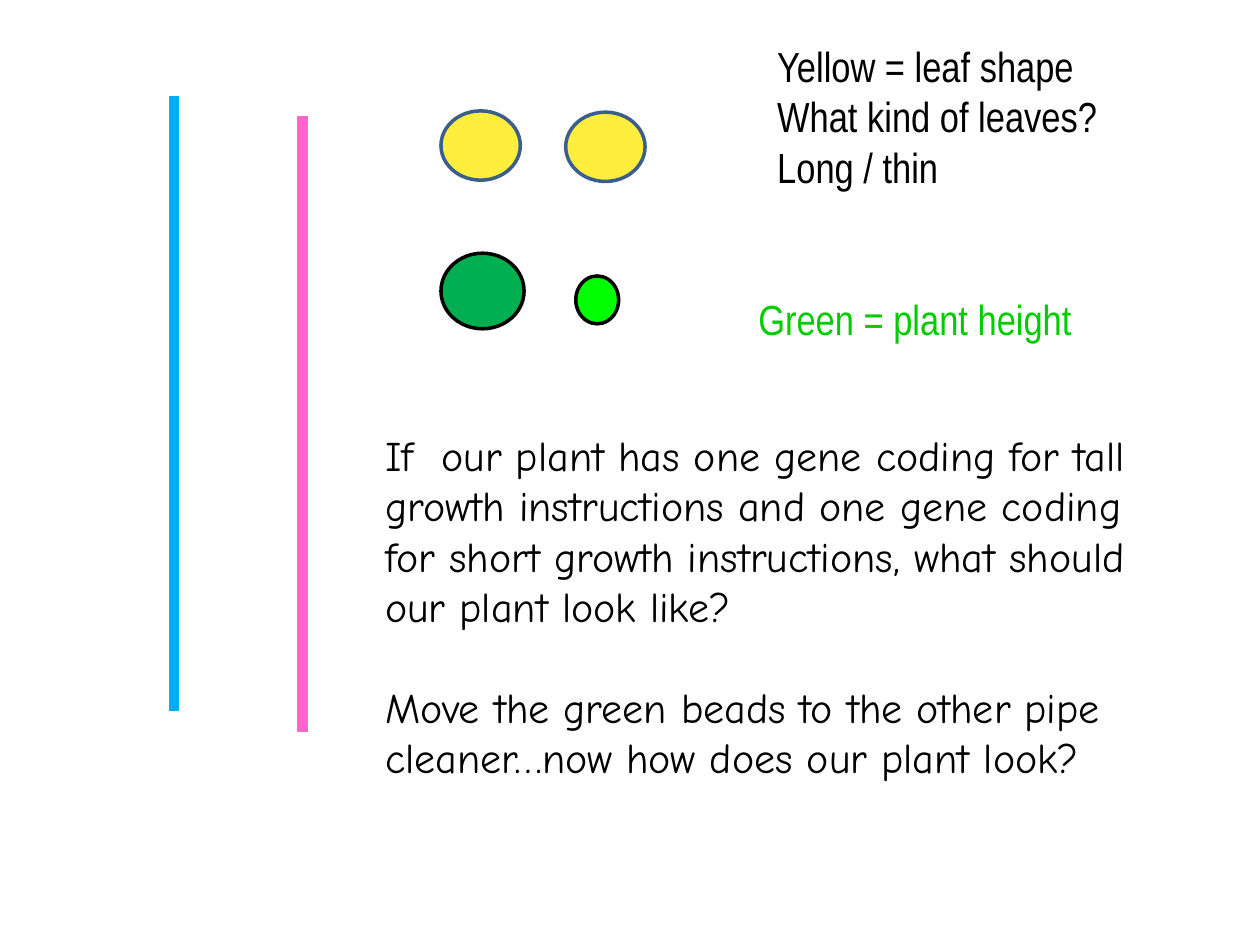
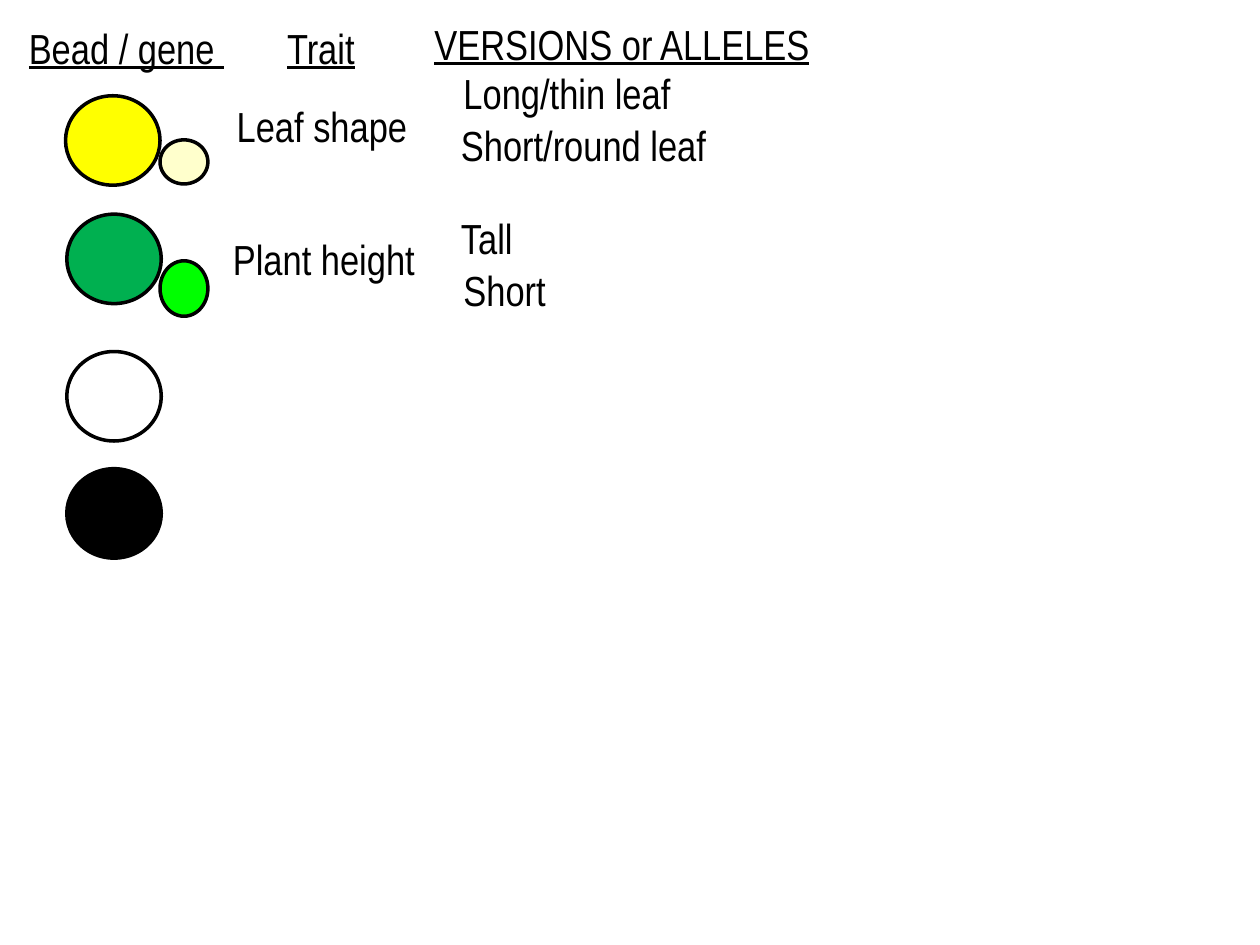
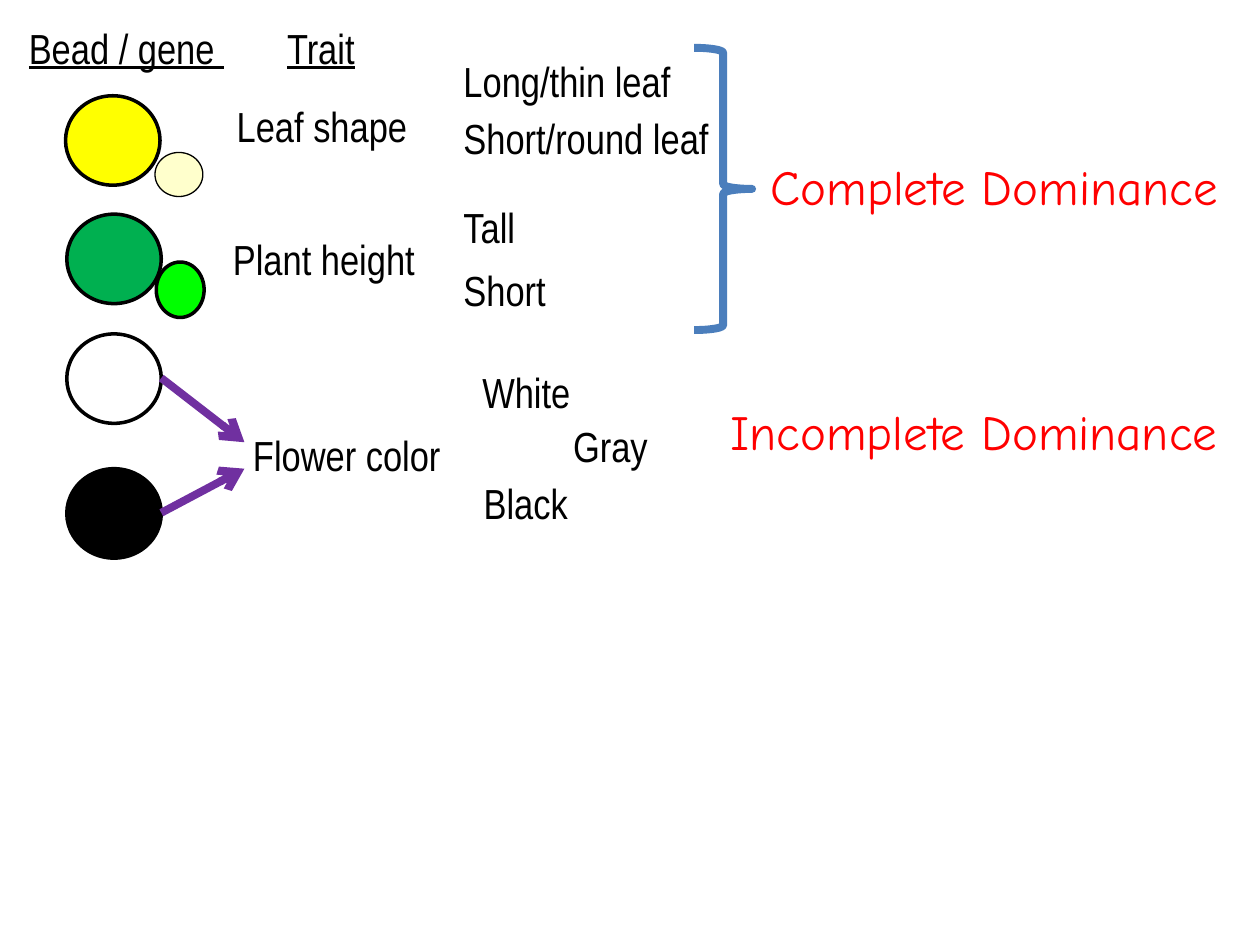
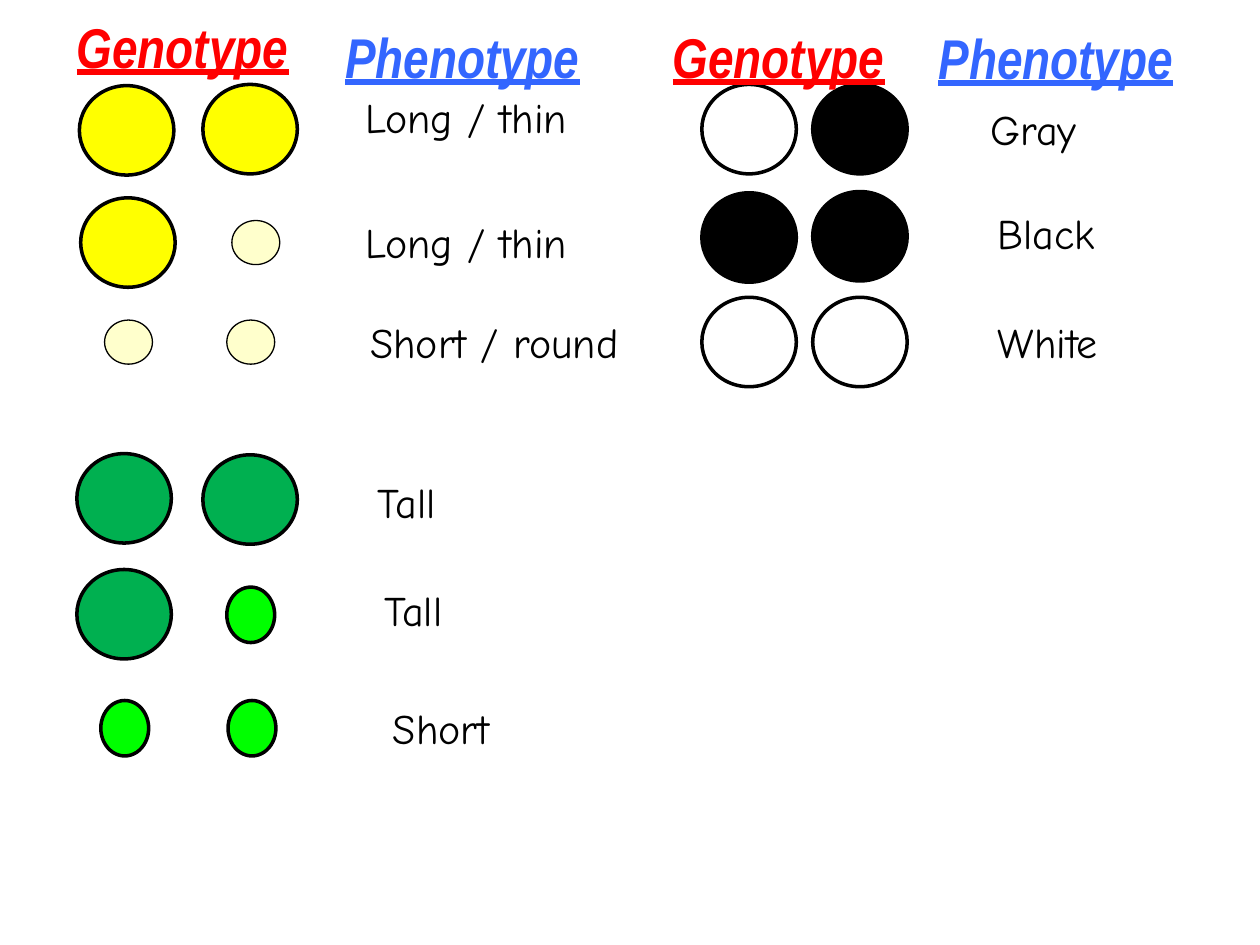
from lxml import etree
from pptx import Presentation
from pptx.dml.color import RGBColor
from pptx.enum.shapes import MSO_CONNECTOR, MSO_SHAPE
from pptx.enum.text import MSO_AUTO_SIZE
from pptx.oxml.ns import qn
from pptx.util import Inches, Pt

OVAL = MSO_SHAPE.OVAL
BRACE = MSO_SHAPE.RIGHT_BRACE
STRAIGHT = MSO_CONNECTOR.STRAIGHT
GROW = MSO_AUTO_SIZE.SHAPE_TO_FIT_TEXT

NARROW, COMIC = "Arial Narrow", "Comic Neue"
BLACK, WHITE, RED = "000000", "FFFFFF", "FF0000"
GREEN, LIME, PURPLE = "00B050", "00FF00", "7030A0"

# Bead kinds: width, height, fill, line width
BEADS = {
    "yellow": (0.75, 0.71, "FFFF00", 2),
    "cream": (0.38, 0.35, "FFFFCC", 0.75),
    "green": (0.75, 0.71, GREEN, 2),
    "lime": (0.38, 0.44, LIME, 2),
    "white": (0.75, 0.71, WHITE, 2),
    "black": (0.75, 0.71, BLACK, 2),
}


def color(code):
    return RGBColor.from_string(code)


def write(para, text, font=NARROW, size=24, ink=BLACK, bold=False,
          slant=False, under=False):
    run = para.add_run()
    run.text = text
    face = run.font
    face.name, face.size = font, Pt(size)
    face.color.rgb = color(ink)
    face.bold, face.italic, face.underline = bold, slant, under


class Deck:
    def __init__(self):
        self.prs = Presentation()
        self.prs.slide_width, self.prs.slide_height = Inches(10), Inches(7.5)
        self.slide = None

    def page(self):
        self.slide = self.prs.slides.add_slide(self.prs.slide_layouts[6])

    def text(self, x, y, w, *lines, h=0.51, gap=0, **style):
        box = self.slide.shapes.add_textbox(
            Inches(x), Inches(y), Inches(w), Inches(h))
        frame = box.text_frame
        frame.word_wrap = True
        frame.auto_size = GROW
        for i, line in enumerate(lines):
            para = frame.add_paragraph() if i else frame.paragraphs[0]
            if i and gap:
                para.space_before = Pt(gap)
            write(para, line, **style)

    def shape(self, kind, x, y, w, h, fill=None, edge=BLACK, wide=2):
        item = self.slide.shapes.add_shape(
            kind, Inches(x), Inches(y), Inches(w), Inches(h))
        item.shadow.inherit = False
        if fill:
            item.fill.solid()
            item.fill.fore_color.rgb = color(fill)
        else:
            item.fill.background()
        item.line.color.rgb = color(edge)
        item.line.width = Pt(wide)

    def bead(self, kind, x, y, wide=None):
        w, h, fill, line = BEADS[kind]
        self.shape(OVAL, x, y, w, h, fill, wide=wide or line)

    def line(self, x1, y1, x2, y2, ink, wide, arrow=False):
        item = self.slide.shapes.add_connector(
            STRAIGHT, Inches(x1), Inches(y1), Inches(x2), Inches(y2))
        item.line.color.rgb = color(ink)
        item.line.width = Pt(wide)
        if arrow:
            tip = etree.SubElement(item.line._get_or_add_ln(), qn("a:tailEnd"))
            tip.set("type", "arrow")
        etree.SubElement(item._element.spPr, qn("a:effectLst"))

    def traits(self, white):
        """Bead and trait columns, with the white bead at a given height."""
        for kind, x, y in (("yellow", 0.52, 0.76), ("green", 0.53, 1.7),
                           ("white", 0.53, white), ("black", 0.53, 3.72)):
            self.bead(kind, x, y)
        self.text(0.13, 0.13, 1.81, "Bead / gene ", under=True)
        self.text(2.18, 0.13, 1.34, "Trait", under=True)
        self.text(1.78, 0.75, 2.13, "Leaf shape")
        self.text(1.75, 1.8, 2.13, "Plant height")

    def alleles(self, *spots):
        names = ("Long/thin leaf", "Short/round leaf", "Tall", "Short")
        for name, w, (x, y) in zip(names, (2.12, 2.68, 1.06, 1.06), spots):
            self.text(x, y, w, name)


def pipes(deck):
    deck.page()
    # Pipe cleaners
    deck.line(1.38, 0.76, 1.38, 5.64, "00B0F0", 6)
    deck.line(2.4, 0.92, 2.4, 5.81, "FF66CC", 6)
    # Loose beads
    for x, y in ((4.49, 0.89), (3.5, 0.88)):
        deck.shape(OVAL, x, y, 0.63, 0.55, "FFEE3D", "3A5F8C")
    deck.shape(OVAL, 3.5, 2.01, 0.66, 0.6, GREEN)
    deck.shape(OVAL, 4.57, 2.19, 0.34, 0.38, LIME)
    # Key and questions
    deck.text(6.07, 0.27, 2.84, "Yellow = leaf shape",
              "What kind of leaves?", "Long / thin", h=1.31)
    deck.text(5.92, 2.28, 2.99, "Green = plant height", ink="00CC00")
    deck.text(2.96, 3.36, 6.3,
              "If  our plant has one gene coding for tall growth instructions "
              "and one gene coding for short growth instructions, what should "
              "our plant look like?",
              "Move the green beads to the other pipe cleaner…now how does "
              "our plant look?", h=3.33, gap=28.8, font=COMIC)


def versions(deck):
    deck.page()
    deck.traits(2.79)
    deck.alleles((3.58, 0.49), (3.56, 0.9), (3.56, 1.64), (3.58, 2.05))
    deck.bead("lime", 1.27, 2.07)
    deck.bead("cream", 1.27, 1.11, wide=2)
    deck.text(3.35, 0.1, 3.5, "VERSIONS or ALLELES", under=True)


def rules(deck):
    deck.page()
    deck.traits(2.65)
    deck.alleles((3.58, 0.39), (3.58, 0.84), (3.58, 1.55), (3.58, 2.05))
    # Flower color
    deck.line(1.28, 3, 1.94, 3.51, PURPLE, 4.5, arrow=True)
    deck.line(1.28, 4.07, 1.94, 3.72, PURPLE, 4.5, arrow=True)
    deck.text(1.91, 3.36, 1.96, "Flower color")
    deck.text(3.73, 2.86, 2.13, "White")
    deck.text(3.74, 3.74, 2.13, "Black")
    deck.text(4.45, 3.29, 1.06, "Gray")
    # Kinds of dominance
    deck.bead("lime", 1.24, 2.08)
    for x, y, name in ((5.7, 3.14, "Incomplete Dominance"),
                       (6.02, 1.19, "Complete Dominance")):
        deck.text(x, y, 4.49, name, h=0.57, font=COMIC, size=28, ink=RED)
    deck.shape(BRACE, 5.51, 0.38, 0.46, 2.24, edge="4B7EBC", wide=4.5)
    deck.bead("cream", 1.23, 1.21)


def types(deck):
    deck.page()
    # Each row: two beads with their places, then the phenotype
    rows = (
        ("yellow", 0.63, 0.68, "yellow", 1.61, 0.67,
         "Long / thin", 2.8, 0.68, 2.28),
        ("yellow", 0.64, 1.57, "cream", 1.84, 1.75,
         "Long / thin", 2.8, 1.67, 2.28),
        ("cream", 0.83, 2.54, "cream", 1.8, 2.54,
         "Short / round", 2.84, 2.46, 2.4),
        ("green", 0.61, 3.6, "green", 1.61, 3.61, "Tall", 2.9, 3.73, 0.92),
        ("green", 0.61, 4.52, "lime", 1.8, 4.66, "Tall", 2.95, 4.59, 0.99),
        ("lime", 0.8, 5.56, "lime", 1.81, 5.56, "Short", 3.02, 5.53, 1.51),
        ("white", 5.57, 0.67, "black", 6.45, 0.67, "Gray", 7.76, 0.77, 0.99),
        ("black", 5.57, 1.53, "black", 6.45, 1.52, "Black", 7.82, 1.6, 1.12),
        ("white", 5.57, 2.36, "white", 6.45, 2.36, "White", 7.82, 2.46, 1.52),
    )
    for row in rows:
        deck.bead(*row[:3])
        deck.bead(*row[3:6])
        name, x, y, w = row[6:]
        deck.text(x, y, w, name, font=COMIC)
    # Column heads
    for name, ink, spots in (
            ("Phenotype", "3366FF", ((2.64, 0.13, 2.44), (7.35, 0.14, 2.44))),
            ("Genotype", RED, ((0.51, 0.05, 2.01), (5.24, 0.13, 1.96)))):
        for x, y, w in spots:
            deck.text(x, y, w, name, h=0.64, size=32, ink=ink,
                      bold=True, slant=True, under=True)


def main():
    deck = Deck()
    for build in (pipes, versions, rules, types):
        build(deck)
    deck.prs.save("out.pptx")


if __name__ == "__main__":
    main()
